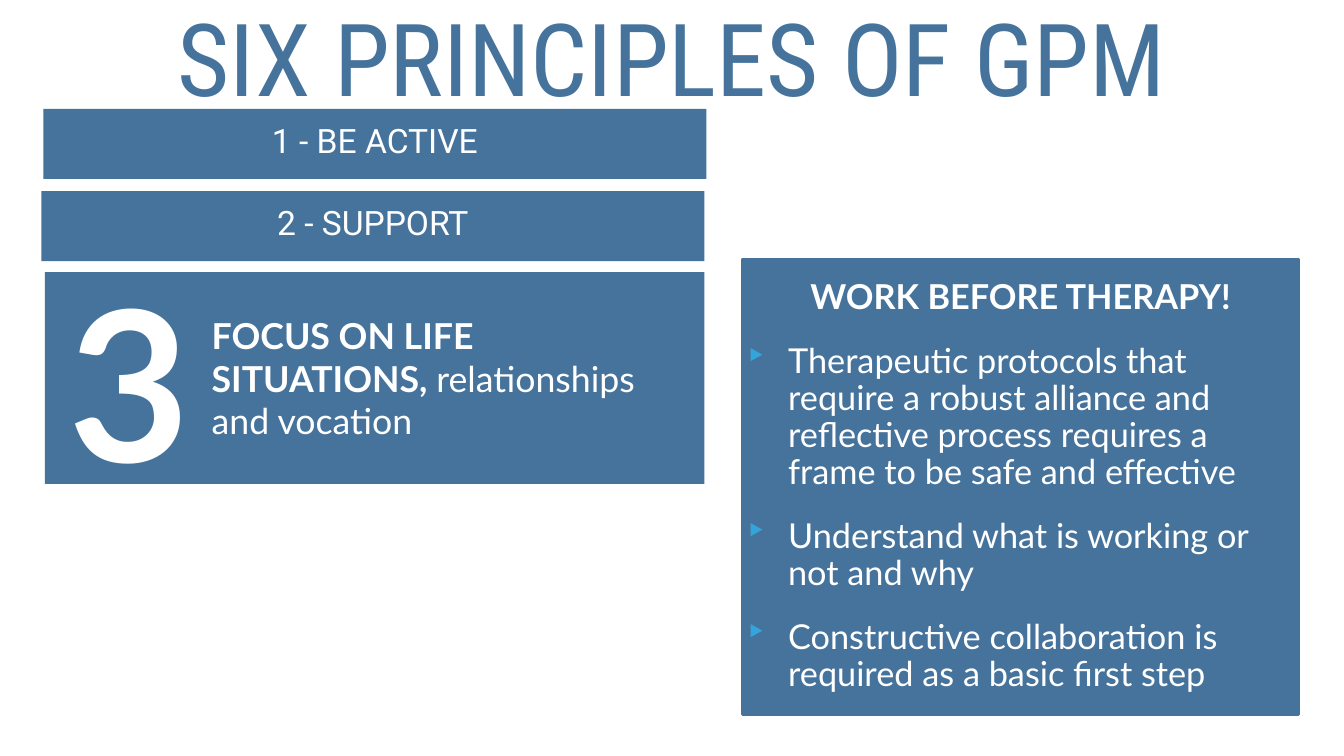
from lxml.etree import SubElement
from pptx import Presentation
from pptx.dml.color import RGBColor
from pptx.enum.shapes import MSO_SHAPE
from pptx.enum.text import MSO_ANCHOR, PP_ALIGN
from pptx.oxml.ns import qn
from pptx.util import Inches, Pt

BLUE = RGBColor(0x46, 0x73, 0x9C)
WHITE = RGBColor(0xFF, 0xFF, 0xFF)
BULLET_BLUE = RGBColor(0x34, 0xA5, 0xDA)

THERAPY_POINTS = [
    "Therapeutic protocols that require a robust alliance and reflective process requires a frame to be safe and effective",
    "Understand what is working or not and why",
    "Constructive collaboration is required as a basic first step",
]


def prepare_frame(box, inset):
    """Wrap and vertically centre the text of a box."""
    frame = box.text_frame
    frame.word_wrap = True
    frame.vertical_anchor = MSO_ANCHOR.MIDDLE
    frame.margin_left = frame.margin_right = Inches(inset)
    frame.margin_top = frame.margin_bottom = Inches(inset)
    return frame


def add_panel(shapes, left, top, width, height):
    """Add a plain blue rectangle."""
    panel = shapes.add_shape(
        MSO_SHAPE.RECTANGLE, Inches(left), Inches(top), Inches(width), Inches(height)
    )
    panel.shadow.inherit = False
    panel.fill.solid()
    panel.fill.fore_color.rgb = BLUE
    panel.line.fill.background()
    return panel


def add_text_box(shapes, left, top, width, height, inset):
    """Add a text box and return its frame."""
    box = shapes.add_textbox(Inches(left), Inches(top), Inches(width), Inches(height))
    return prepare_frame(box, inset)


def format_paragraph(para, align=PP_ALIGN.LEFT, spacing=1.0):
    """Set the alignment and line spacing of a paragraph."""
    para.alignment = align
    para.line_spacing = spacing


def add_span(para, text, size, font="Lato", bold=False, color=WHITE):
    """Add a run of text to a paragraph."""
    span = para.add_run()
    span.text = text
    span.font.size = Pt(size)
    span.font.name = font
    span.font.bold = bold
    span.font.color.rgb = color


def add_bullet(para):
    """Give a paragraph a hanging triangular bullet."""
    properties = para._p.get_or_add_pPr()
    indent = Inches(0.85)
    properties.set("marL", str(indent))
    properties.set("indent", str(-indent))
    color = SubElement(properties, qn("a:buClr"))
    SubElement(color, qn("a:srgbClr"), val=str(BULLET_BLUE))
    SubElement(properties, qn("a:buSzPct"), val="105000")
    SubElement(properties, qn("a:buChar"), char="‣")


def add_title(page):
    """Add the slide title."""
    para = add_text_box(page.shapes, 0, 0.25, 26.67, 2.16, 0.08).paragraphs[0]
    format_paragraph(para, PP_ALIGN.CENTER, 0.8)
    add_span(para, "SIX PRINCIPLES OF GPM", 144, "Roboto Condensed", color=BLUE)


def add_principle_bar(page, left, top, text):
    """Add a bar that names one principle."""
    bar = add_panel(page.shapes, left, top, 13.16, 1.39)
    para = prepare_frame(bar, 0.06).paragraphs[0]
    format_paragraph(para, PP_ALIGN.CENTER, 0.8)
    add_span(para, text, 48, "Roboto")


def add_focus_card(page):
    """Add the grouped card for the third principle."""
    shapes = page.shapes.add_group_shape().shapes
    add_panel(shapes, 0.89, 5.4, 13.09, 4.2)
    para = add_text_box(shapes, 4.12, 5.27, 9.64, 4.45, 0.08).paragraphs[0]
    format_paragraph(para)
    add_span(para, "FOCUS ON LIFE SITUATIONS, ", 51, bold=True)
    add_span(para, "relationships and vocation", 51)
    number = add_text_box(shapes, 1.29, 4.6, 2.76, 5.81, 0.06).paragraphs[0]
    format_paragraph(number)
    add_span(number, "3", 300, bold=True)


def add_therapy_panel(page):
    """Add the panel on work before therapy."""
    panel = add_panel(page.shapes, 14.73, 5.14, 11.04, 9.04)
    panel.line.color.rgb = BLUE
    panel.line.width = Pt(4)
    frame = prepare_frame(panel, 0.06)
    heading = frame.paragraphs[0]
    format_paragraph(heading, PP_ALIGN.CENTER, 0.9)
    add_span(heading, "WORK BEFORE THERAPY!", 49, bold=True)
    for point in THERAPY_POINTS:
        para = frame.add_paragraph()
        add_bullet(para)
        format_paragraph(para, spacing=0.9)
        para.space_before = Pt(38)
        add_span(para, point, 49)


def main():
    """Build the slide and save the deck."""
    deck = Presentation()
    deck.slide_width, deck.slide_height = Inches(26.67), Inches(15)
    page = deck.slides.add_slide(deck.slide_layouts[6])
    add_title(page)
    add_principle_bar(page, 0.86, 2.16, "1 - BE ACTIVE")
    add_focus_card(page)
    add_therapy_panel(page)
    add_principle_bar(page, 0.82, 3.79, "2 - SUPPORT")
    deck.save("out.pptx")


if __name__ == "__main__":
    main()
